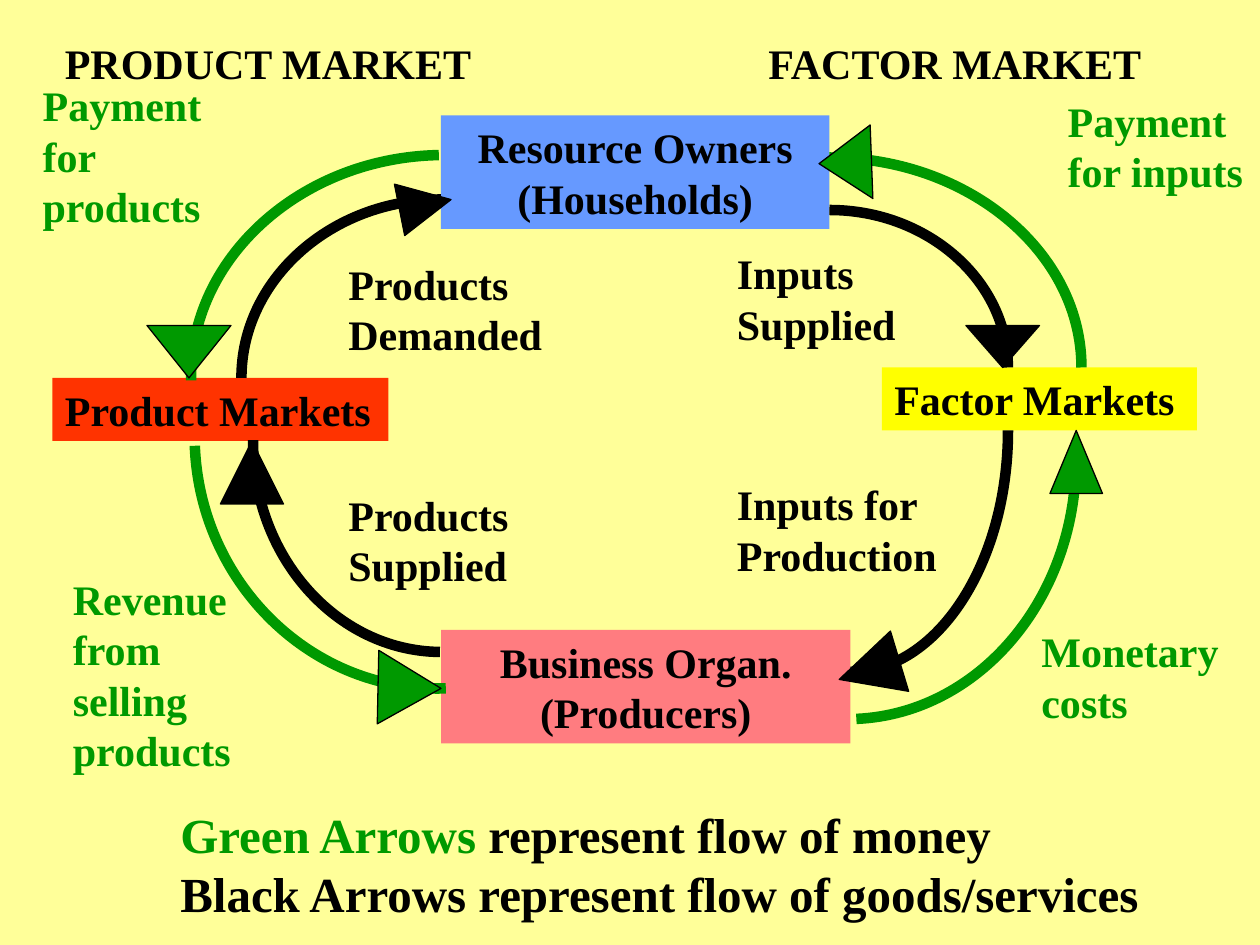
from lxml import etree
from pptx import Presentation
from pptx.dml import color
from pptx.enum import shapes, text
from pptx.oxml import ns
from pptx.util import Inches, Pt

FONT = "Times New Roman"
BLACK, GREEN = "000000", "009900"
KIND = shapes.MSO_SHAPE
DOWN, UP = KIND.FLOWCHART_MERGE, KIND.FLOWCHART_EXTRACT
GRID = 24  # grid lines to the inch
BEND = 0.55  # pull of a quarter ellipse's handles

# Boxes: words, left, top, width, height, fill, centred
BOXES = [
    ("Resource Owners\v(Households)", 3.5, 0.92, 3.08, 0.9, "6699FF", True),
    ("Business Organ.\v(Producers)", 3.5, 5, 3.25, 0.9, "FF7C80", True),
    ("Factor Markets", 7, 2.92, 2.5, 0.5, "FFFF00", False),
    ("Product Markets", 0.42, 3, 2.67, 0.5, "FF3300", False),
]

# Flows: colour, level end, upright end, turn
FLOWS = [
    (GREEN, (6.58, 1.25), (8.58, 2.92), 0),
    (GREEN, (3.5, 1.25), (1.5, 3), 358.9),
    (GREEN, (1.58, 3.5), (3.5, 5.5), 177.8),
    (GREEN, (8.58, 3.58), (6.75, 5.67), 177.5),
    (BLACK, (3.5, 1.58), (1.92, 3), 0),
    (BLACK, (2, 3.5), (3.5, 5.17), 180.6),
    (BLACK, (6.75, 5.33), (8, 3.42), 0),
    (BLACK, (6.58, 1.67), (8, 2.92), 0),
]

# Arrowheads: kind, left, top, width, height, turn, fill
HEADS = [
    (UP, 2.96, 5.21, 0.58, 0.5, 91.2, GREEN),
    (DOWN, 1.17, 2.58, 0.67, 0.42, 0, GREEN),
    (DOWN, 6.41, 1.09, 0.58, 0.41, 87.9, GREEN),
    (KIND.ISOSCELES_TRIANGLE, 8.33, 3.42, 0.42, 0.5, 0, GREEN),
    (DOWN, 7.67, 2.58, 0.58, 0.33, 0, BLACK),
    (DOWN, 6.65, 5.07, 0.5, 0.5, 73.2, BLACK),
    (UP, 1.75, 3.5, 0.5, 0.5, 0, BLACK),
    (UP, 3.17, 1.42, 0.42, 0.42, 78.7, BLACK),
]

# Labels: (words, colour) runs, left, top, width, height, size
LABELS = [
    ([("Green Arrows", GREEN),
      (" represent flow of money\vBlack Arrows represent flow of goods/services",
       BLACK)], 1.33, 6.33, 7.92, 1.03, 28),
    ([("Monetary costs", GREEN)], 8.17, 4.92, 1.83, 0.91, 24),
    ([("Revenue from selling products", GREEN)], 0.48, 4.5, 1.5, 1.72, 24),
    ([("Payment for products", GREEN)], 0.24, 0.59, 1.75, 1.31, 24),
    ([("Products Demanded", BLACK)], 2.67, 2, 2.17, 0.91, 24),
    ([("Products Supplied", BLACK)], 2.67, 3.83, 1.83, 0.91, 24),
    ([("Inputs Supplied", BLACK)], 5.75, 1.92, 1.92, 0.91, 24),
    ([("Inputs for Production", BLACK)], 5.75, 3.75, 1.83, 0.91, 24),
    ([("PRODUCT MARKET", BLACK)], 0.42, 0.25, 4, 0.5, 24),
    ([("FACTOR MARKET", BLACK)], 6, 0.25, 3.42, 0.5, 24),
    ([("Payment for inputs", GREEN)], 8.38, 0.71, 1.75, 0.91, 24),
]


def inch(value):
    """Snap a length to the grid where it lies on a grid line."""
    near = round(value * GRID) / GRID
    return Inches(near if abs(near - value) < 0.01 else value)


def rgb(code):
    return color.RGBColor.from_string(code)


def paint(shape, fill=None, line=None, width=0.75):
    shape.shadow.inherit = False
    for part, code in ((shape.fill, fill), (shape.line.fill, line)):
        if code:
            part.solid()
            part.fore_color.rgb = rgb(code)
        else:
            part.background()
    if line:
        shape.line.width = Pt(width)


def write(shape, runs, size=24, centred=False):
    frame = shape.text_frame
    frame.word_wrap = True
    frame.auto_size = text.MSO_AUTO_SIZE.SHAPE_TO_FIT_TEXT
    frame.vertical_anchor = text.MSO_ANCHOR.TOP
    para = frame.paragraphs[0]
    para.alignment = text.PP_ALIGN.CENTER if centred else text.PP_ALIGN.LEFT
    # Space before as a share of the line
    gap = etree.SubElement(para._p.get_or_add_pPr(), ns.qn("a:spcBef"))
    etree.SubElement(gap, ns.qn("a:spcPct"), val="50000")
    for words, code in runs:
        for i, line in enumerate(words.split("\v")):
            if i:
                para.add_line_break()
            run = para.add_run()
            run.text = line
            font = run.font
            font.name, font.size, font.bold = FONT, Pt(size), True
            font.color.rgb = rgb(code)


def arc(tree, code, level, upright, turn):
    (x0, y0), (x1, y1) = [tuple(map(inch, dot)) for dot in (level, upright)]
    path = tree.build_freeform(x0, y0)
    path.add_line_segments([(x1, y1)], close=False)
    shape = path.convert_to_shape()
    paint(shape, line=code, width=6)
    shape.rotation = turn
    # Bend the straight segment into a quarter ellipse
    left, top = min(x0, x1), min(y0, y1)
    bend = [(x0 + (x1 - x0) * BEND, y0), (x1, y1 + (y0 - y1) * BEND), (x1, y1)]
    seg = shape._element.find(".//" + ns.qn("a:lnTo"))
    curve = etree.Element(ns.qn("a:cubicBezTo"))
    for x, y in bend:
        etree.SubElement(curve, ns.qn("a:pt"),
                         x=str(int(x - left)), y=str(int(y - top)))
    seg.getparent().replace(seg, curve)


def main():
    deck = Presentation()
    deck.slide_width, deck.slide_height = Inches(10), Inches(7.5)
    slide = deck.slides.add_slide(deck.slide_layouts[6])
    back = slide.background.fill
    back.solid()
    back.fore_color.rgb = rgb("FFFF99")
    tree = slide.shapes

    for words, *place, fill, centred in BOXES:
        box = tree.add_shape(KIND.RECTANGLE, *map(inch, place))
        paint(box, fill)
        write(box, [(words, BLACK)], centred=centred)

    for flow in FLOWS:
        arc(tree, *flow)

    for kind, *place, turn, fill in HEADS:
        head = tree.add_shape(kind, *map(inch, place))
        head.rotation = turn
        paint(head, fill, BLACK)

    for runs, *place, size in LABELS:
        write(tree.add_textbox(*map(inch, place)), runs, size)

    deck.save("out.pptx")


if __name__ == "__main__":
    main()
